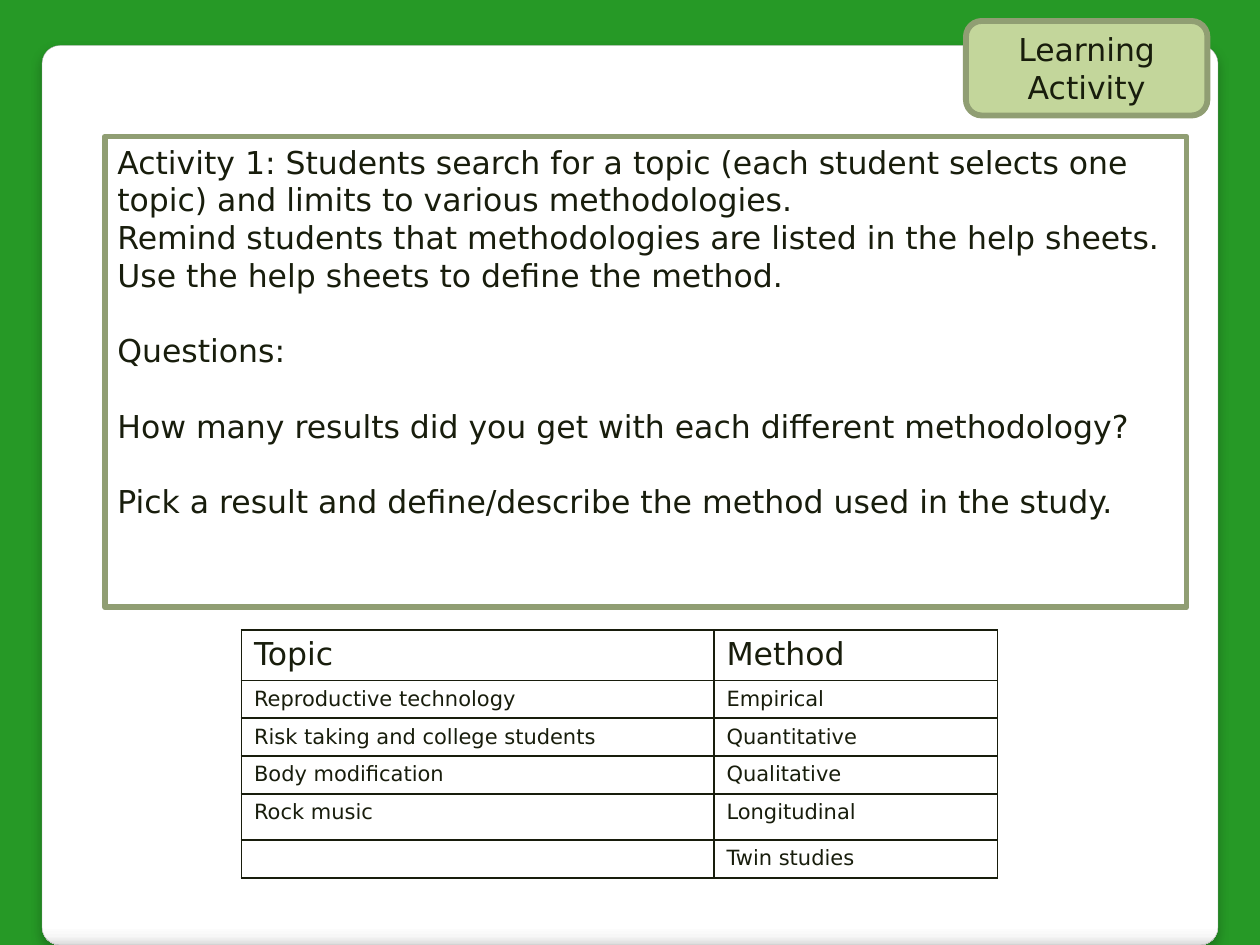
"""Build the learning activity slide with its panel, badge, instructions and table."""
from lxml import etree
from pptx import Presentation
from pptx.dml.color import RGBColor
from pptx.enum.shapes import MSO_SHAPE
from pptx.enum.text import MSO_ANCHOR, PP_ALIGN
from pptx.oxml import parse_xml
from pptx.oxml.ns import qn
from pptx.util import Pt

RECT, ROUNDED = MSO_SHAPE.RECTANGLE, MSO_SHAPE.ROUNDED_RECTANGLE
TOP, MIDDLE = MSO_ANCHOR.TOP, MSO_ANCHOR.MIDDLE
LEFT, CENTER = PP_ALIGN.LEFT, PP_ALIGN.CENTER

BLANK_LAYOUT = 6
FONT = "DejaVu Sans"
NAMESPACE = "http://schemas.openxmlformats.org/drawingml/2006/main"
COLORS = {
    "green": "269926",
    "white": "FFFFFF",
    "panel_line": "A4A4A4",
    "badge": "C3D69B",
    "olive": "909E73",
    "ink": "181D0C",
    "shadow": "000000",
}
PANEL_STOPS = [(0, "FFFFFF"), (98, "FFFFFF"), (99, "F7F7F7"), (100, "DADADA")]
LINE_GAP = 21.5
INSTRUCTIONS = [
    ("Activity 1: Students search for a topic (each student selects one topic) "
     "and limits to various methodologies.", 0),
    ("Remind students that methodologies are listed in the help sheets.", 0),
    ("Use the help sheets to define the method.", 0),
    ("Questions:", LINE_GAP),
    ("How many results did you get with each different methodology?", LINE_GAP),
    ("Pick a result and define/describe the method used in the study.", LINE_GAP),
]
TABLE_ROWS = [
    ("Topic", "Method"),
    ("Reproductive technology", "Empirical"),
    ("Risk taking and college students", "Quantitative"),
    ("Body modification", "Qualitative"),
    ("Rock music", "Longitudinal"),
    ("", "Twin studies"),
]
COLUMN_WIDTHS = [270, 162]
ROW_HEIGHTS = [28.8, 21.6, 21.6, 21.6, 26.4, 21.6]


def color(name):
    """Return the named colour."""
    return RGBColor.from_string(COLORS[name])


def add_block(page, kind, bounds, fill, line, width):
    """Add a preset shape with a solid or empty fill and an outline."""
    box = page.shapes.add_shape(kind, *map(Pt, bounds))
    box.shadow.inherit = False
    if fill:
        box.fill.solid()
        box.fill.fore_color.rgb = color(fill)
    else:
        box.fill.background()
    box.line.color.rgb = color(line)
    box.line.width = Pt(width)
    return box


def write_para(para, text, size, **formats):
    """Write one styled run and apply the paragraph formats."""
    for name, value in formats.items():
        setattr(para, name, value)
    span = para.add_run()
    span.text = text
    for name, value in {"name": FONT, "size": Pt(size)}.items():
        setattr(span.font, name, value)
    span.font.color.rgb = color("ink")


def add_panel(page):
    """Add the white panel with its shaded lower edge and soft shadow."""
    box = add_block(page, ROUNDED, (24, 26, 672, 514), "white", "panel_line", 0.16)
    box.adjustments[0] = 0.02
    stops = "".join(
        f'<a:gs pos="{place * 1000}"><a:srgbClr val="{shade}"/></a:gs>'
        for place, shade in PANEL_STOPS
    )
    gradient = parse_xml(
        f'<a:gradFill xmlns:a="{NAMESPACE}"><a:gsLst>{stops}</a:gsLst>'
        '<a:lin ang="5400000" scaled="0"/></a:gradFill>'
    )
    properties = box.element.spPr
    properties.replace(properties.find(qn("a:solidFill")), gradient)
    effects = properties.find(qn("a:effectLst"))
    shadow = etree.SubElement(
        effects, qn("a:outerShdw"), blurRad=str(Pt(6)), dist=str(Pt(4)),
        dir="5400000", algn="t", rotWithShape="0",
    )
    tint = etree.SubElement(shadow, qn("a:srgbClr"), val=COLORS["shadow"])
    etree.SubElement(tint, qn("a:alpha"), val="25000")


def add_text_block(page, kind, bounds, fill, lines, anchor, align):
    """Add an olive-edged block holding the given lines and gaps."""
    box = add_block(page, kind, bounds, fill, "olive", 3.35)
    frame = box.text_frame
    for name, value in {"word_wrap": True, "vertical_anchor": anchor}.items():
        setattr(frame, name, value)
    for index, (text, gap) in enumerate(lines):
        para = frame.add_paragraph() if index else frame.paragraphs[0]
        write_para(para, text, 18, alignment=align, space_before=Pt(gap))


def add_borders(cell):
    """Draw the four thin borders of a cell."""
    properties = cell._tc.get_or_add_tcPr()
    for index, side in enumerate(("lnL", "lnR", "lnT", "lnB")):
        border = parse_xml(
            f'<a:{side} xmlns:a="{NAMESPACE}" w="{Pt(1)}"><a:solidFill>'
            f'<a:srgbClr val="{COLORS["ink"]}"/></a:solidFill></a:{side}>'
        )
        properties.insert(index, border)


def add_topic_table(page):
    """Add the table of topics and methods."""
    table = page.shapes.add_table(
        len(TABLE_ROWS), len(COLUMN_WIDTHS), Pt(138), Pt(360),
        Pt(sum(COLUMN_WIDTHS)), Pt(sum(ROW_HEIGHTS)),
    ).table
    for name in ("first_row", "horz_banding"):
        setattr(table, name, False)
    for column, width in zip(table.columns, COLUMN_WIDTHS):
        column.width = Pt(width)
    for row_index, (row, height) in enumerate(zip(table.rows, ROW_HEIGHTS)):
        row.height = Pt(height)
        size = 12 if row_index else 18
        for cell, text in zip(row.cells, TABLE_ROWS[row_index]):
            cell.fill.background()
            add_borders(cell)
            para = cell.text_frame.paragraphs[0]
            if text:
                write_para(para, text, size)
            else:
                etree.SubElement(para._p, qn("a:endParaRPr"), sz=str(size * 100))


def main():
    """Build and save the deck."""
    deck = Presentation()
    deck.slide_width, deck.slide_height = Pt(720), Pt(540)
    page = deck.slides.add_slide(deck.slide_layouts[BLANK_LAYOUT])
    page.background.fill.solid()
    page.background.fill.fore_color.rgb = color("green")
    add_panel(page)
    add_text_block(page, ROUNDED, (552, 12, 138, 54), "badge",
                   [("Learning Activity", 0)], MIDDLE, CENTER)
    add_text_block(page, RECT, (60, 78, 618, 269), None, INSTRUCTIONS, TOP, LEFT)
    add_topic_table(page)
    deck.save("out.pptx")


if __name__ == "__main__":
    main()
